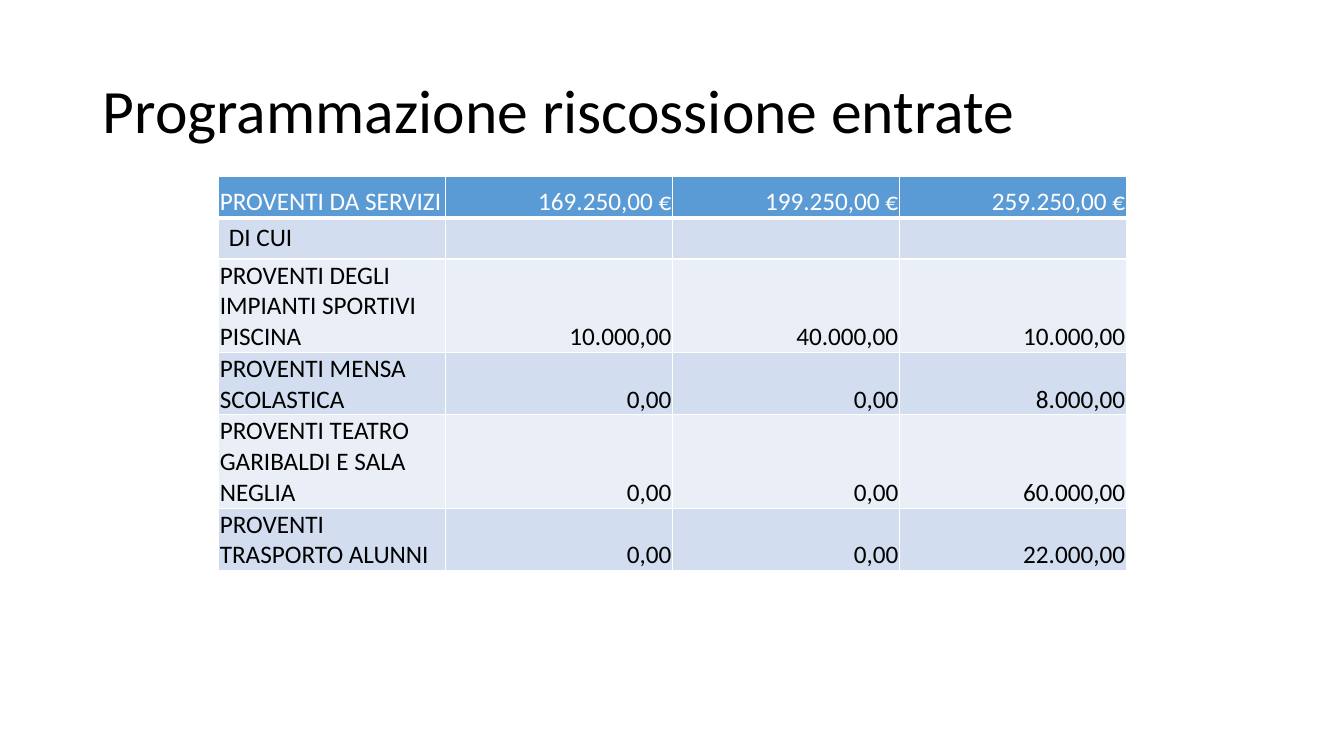
import pptx
import pptx.util
import pptx.dml.color
import pptx.enum.text
import pptx.oxml
import pptx.oxml.ns

Inches, Pt = pptx.util.Inches, pptx.util.Pt
RGB = pptx.dml.color.RGBColor
ALIGN = pptx.enum.text.PP_ALIGN
ANCHOR = pptx.enum.text.MSO_ANCHOR

WHITE = RGB(0xFF, 0xFF, 0xFF)
BLACK = RGB(0, 0, 0)
BLUE = RGB(0x5B, 0x9B, 0xD5)
BANDS = [RGB(0xEA, 0xEF, 0xF7), RGB(0xD2, 0xDE, 0xEF)]
FONT = "Calibri"
COL, ROW = Inches(2.25), Inches(0.41)

ROWS = [
    ["PROVENTI DA SERVIZI", "169.250,00 €", "199.250,00 €", "259.250,00 €"],
    ["DI CUI", "", "", ""],
    ["PROVENTI DEGLI IMPIANTI SPORTIVI PISCINA",
     "10.000,00", "40.000,00", "10.000,00"],
    ["PROVENTI MENSA SCOLASTICA", "0,00", "0,00", "8.000,00"],
    ["PROVENTI TEATRO GARIBALDI E SALA NEGLIA", "0,00", "0,00", "60.000,00"],
    ["PROVENTI TRASPORTO ALUNNI", "0,00", "0,00", "22.000,00"],
]


def style(font, size, color):
    font.name, font.size, font.bold = FONT, Pt(size), False
    font.color.rgb = color


def add_title(slide, text):
    title = slide.shapes.title
    title.left, title.top = Inches(0.92), Inches(0.4)
    title.width, title.height = Inches(11.5), Inches(1.45)
    frame = title.text_frame
    frame.text = text
    frame.vertical_anchor = ANCHOR.MIDDLE
    para = frame.paragraphs[0]
    para.alignment, para.line_spacing = ALIGN.LEFT, 0.9
    style(para.runs[0].font, 44, BLACK)


def add_edges(cell, head):
    """Draw white cell borders, thicker between the head and the body."""
    props = cell._tc.get_or_add_tcPr()
    for place, side in enumerate("LRTB"):
        width = Pt(3 if head and side == "B" else 1)
        edge = pptx.oxml.parse_xml(
            f'<a:ln{side} {pptx.oxml.ns.nsdecls("a")} w="{width}">'
            f'<a:solidFill><a:srgbClr val="{WHITE}"/></a:solidFill>'
            f'</a:ln{side}>')
        props.insert(place, edge)


def fill_cell(cell, text, row, col):
    head = row == 0
    cell.fill.solid()
    cell.fill.fore_color.rgb = BLUE if head else BANDS[row % 2]
    add_edges(cell, head)
    if row != 1:
        cell.vertical_anchor = ANCHOR.BOTTOM
        cell.margin_left = cell.margin_right = cell.margin_top = Inches(0.01)
        cell.margin_bottom = 0
    cell.text_frame.text = text
    para = cell.text_frame.paragraphs[0]
    para.alignment = ALIGN.RIGHT if col else ALIGN.LEFT
    style(para.font, 18, WHITE if head else BLACK)
    for run in para.runs:
        style(run.font, 18, WHITE if head else BLACK)


def add_grid(slide, rows):
    count, cols = len(rows), len(rows[0])
    grid = slide.shapes.add_table(
        count, cols, Inches(2.17), Inches(1.75), COL * cols, ROW * count).table
    for row, texts in enumerate(rows):
        grid.rows[row].height = ROW
        for col, text in enumerate(texts):
            fill_cell(grid.cell(row, col), text, row, col)


def main():
    deck = pptx.Presentation()
    deck.slide_width, deck.slide_height = Inches(13.33), Inches(7.5)
    slide = deck.slides.add_slide(deck.slide_layouts[5])
    add_title(slide, "Programmazione riscossione entrate")
    add_grid(slide, ROWS)
    deck.save("out.pptx")


if __name__ == "__main__":
    main()
